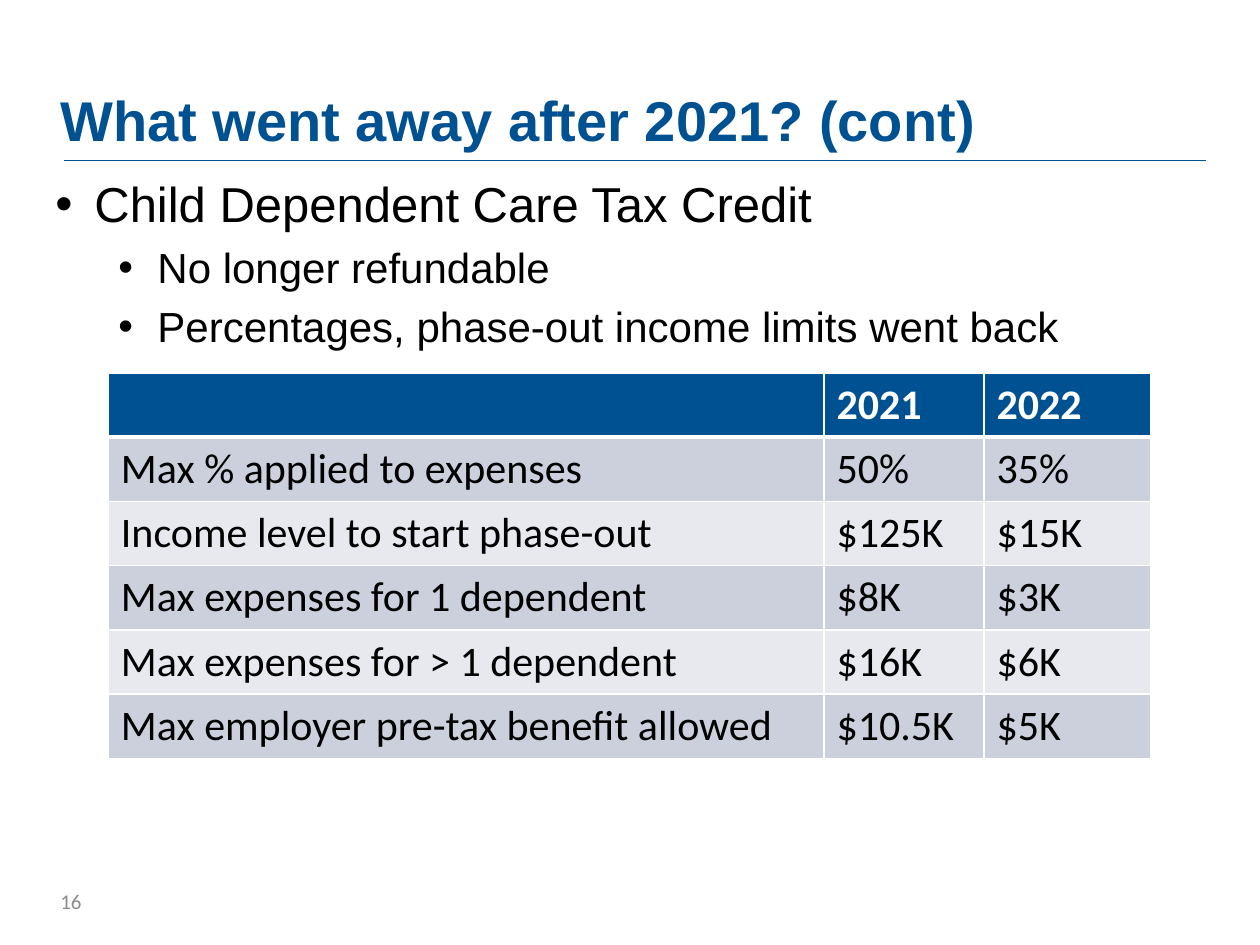
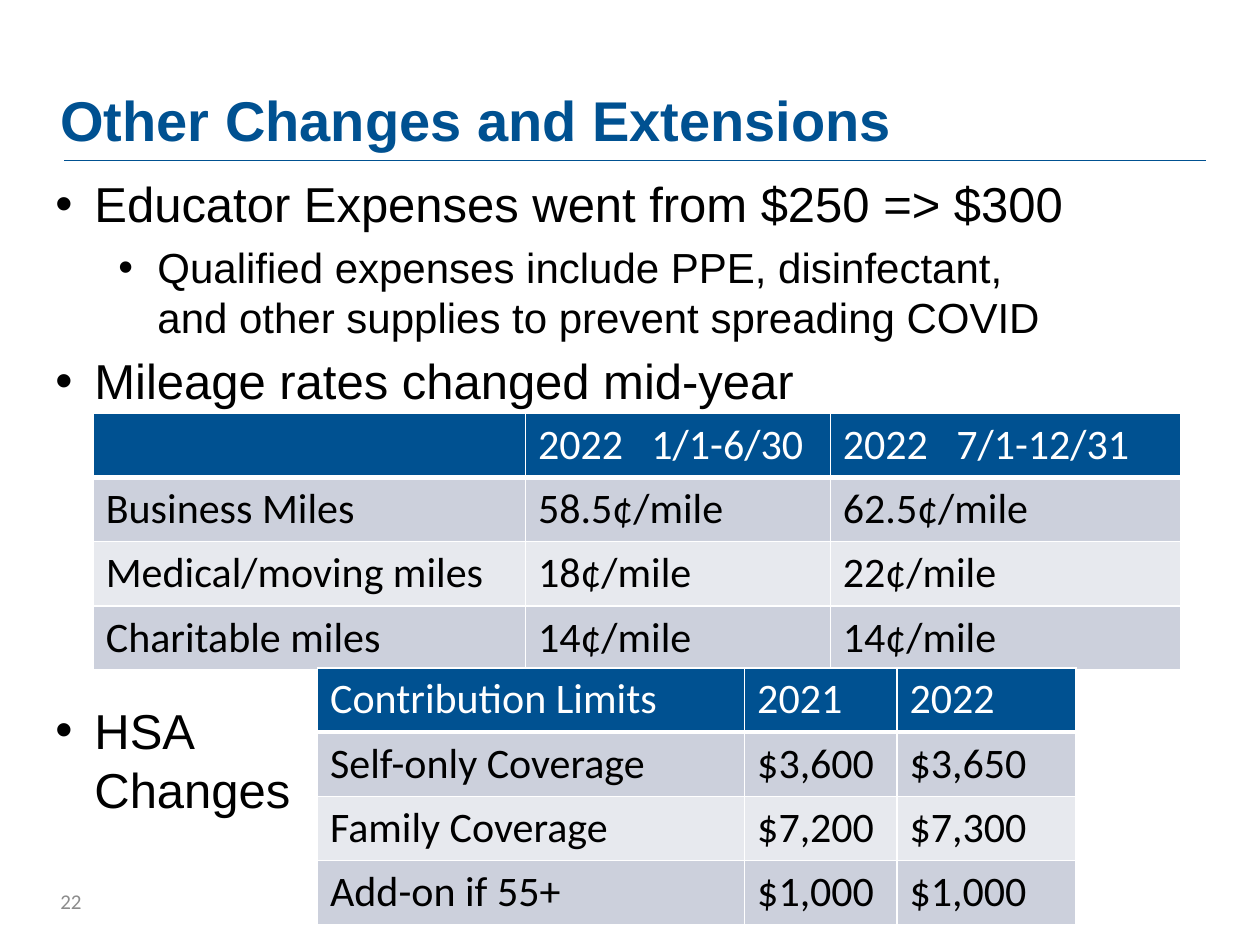
import lxml.etree
import pptx
import pptx.dml.color
import pptx.enum.shapes
import pptx.enum.text
import pptx.oxml.ns
import pptx.util

Inches = pptx.util.Inches
Pt = pptx.util.Pt
RGBColor = pptx.dml.color.RGBColor
Anchor = pptx.enum.text.MSO_ANCHOR

BLUE = RGBColor(0x00, 0x51, 0x91)
GRAY = RGBColor(0x8C, 0x8C, 0x8C)
BLACK = RGBColor(0x00, 0x00, 0x00)
WHITE = RGBColor(0xFF, 0xFF, 0xFF)
BANDS = [RGBColor(0xCC, 0xD0, 0xDC), RGBColor(0xE7, 0xE9, 0xEE)]
TEXT_FONT = "Arial"
TABLE_FONT = "Calibri"

ROW_HEIGHT = 0.51
DATE_TAB = 0.9
BULLET_HANG = 0.31
BULLET_LEVELS = [(0.48, 28), (0.98, 24)]  # indent in inches, size in points
BULLET_GAP = 5
GAP_BESIDE_TABLE = 166

# Bullets are (level, text, space before in points).
SLIDES = [
    {
        "title": "What went away after 2021? (cont)",
        "number": "16",
        "bullets": [
            (0, "Child Dependent Care Tax Credit", 0),
            (1, "No longer refundable", BULLET_GAP),
            (1, "Percentages, phase-out income limits went back", BULLET_GAP),
        ],
        "tables": [
            {
                "position": (0.86, 2.96),
                "columns": (5.68, 1.27, 1.32),
                "bold_header": True,
                "rows": [
                    ("", "2021", "2022"),
                    ("Max % applied to expenses", "50%", "35%"),
                    ("Income level to start phase-out", "$125K", "$15K"),
                    ("Max expenses for 1 dependent", "$8K", "$3K"),
                    ("Max expenses for > 1 dependent", "$16K", "$6K"),
                    ("Max employer pre-tax benefit allowed", "$10.5K", "$5K"),
                ],
            },
        ],
    },
    {
        "title": "Other Changes and Extensions",
        "number": "22",
        "bullets": [
            (0, "Educator Expenses went from $250 => $300", 0),
            (1, "Qualified expenses include PPE, disinfectant,\v"
                "and other supplies to prevent spreading COVID", BULLET_GAP),
            (0, "Mileage rates changed mid-year", BULLET_GAP),
            (0, "HSA\vChanges", GAP_BESIDE_TABLE),
        ],
        "tables": [
            {
                "position": (0.74, 3.28),
                "columns": (3.43, 2.42, 2.78),
                "bold_header": False,
                "rows": [
                    ("", "2022\t1/1-6/30", "2022\t7/1-12/31"),
                    ("Business Miles", "58.5¢/mile", "62.5¢/mile"),
                    ("Medical/moving miles", "18¢/mile", "22¢/mile"),
                    ("Charitable miles", "14¢/mile", "14¢/mile"),
                ],
            },
            {
                "position": (2.52, 5.3),
                "columns": (3.39, 1.21, 1.42),
                "bold_header": False,
                "rows": [
                    ("Contribution Limits", "2021", "2022"),
                    ("Self-only Coverage", "$3,600", "$3,650"),
                    ("Family Coverage", "$7,200", "$7,300"),
                    ("Add-on if 55+", "$1,000", "$1,000"),
                ],
            },
        ],
    },
]


def add_element(parent, tag, **attributes):
    return lxml.etree.SubElement(parent, pptx.oxml.ns.qn(tag), **attributes)


def format_runs(paragraph, font_name, size, color, bold=False):
    for run in paragraph.runs:
        run.font.name = font_name
        run.font.size = Pt(size)
        run.font.color.rgb = color
        run.font.bold = bold


def add_text_frame(slide, left, top, width, height, anchor):
    box = slide.shapes.add_textbox(Inches(left), Inches(top), Inches(width), Inches(height))
    text_frame = box.text_frame
    text_frame.word_wrap = True
    text_frame.vertical_anchor = anchor
    return text_frame


def add_frame(slide, title, number):
    """Add the title, the rule below it and the slide number."""
    rule = slide.shapes.add_connector(
        pptx.enum.shapes.MSO_CONNECTOR.STRAIGHT,
        Inches(0.51), Inches(1.27), Inches(9.57), Inches(1.27))
    rule.line.color.rgb = BLUE
    rule.line.width = Pt(0.5)
    add_element(rule.element.spPr, "a:effectLst")

    number_frame = add_text_frame(slide, 0.38, 6.95, 2.25, 0.4, Anchor.MIDDLE)
    number_frame.text = number
    format_runs(number_frame.paragraphs[0], TABLE_FONT, 12, GRAY)

    title_frame = add_text_frame(slide, 0.38, 0.69, 9.27, 0.58, Anchor.BOTTOM)
    title_frame.text = title
    title_frame.paragraphs[0].line_spacing = 0.9
    format_runs(title_frame.paragraphs[0], TEXT_FONT, 32, BLUE, bold=True)


def add_bullets(slide, bullets):
    text_frame = add_text_frame(slide, 0.27, 1.33, 9.5, 6.02, Anchor.TOP)
    text_frame.margin_left = text_frame.margin_right = 0
    for index, (level, text, space_before) in enumerate(bullets):
        paragraph = text_frame.add_paragraph() if index else text_frame.paragraphs[0]
        paragraph.text = text
        paragraph.level = level
        indent, size = BULLET_LEVELS[level]
        properties = paragraph._p.get_or_add_pPr()
        properties.set("marL", str(Inches(indent)))
        properties.set("indent", str(-Inches(BULLET_HANG)))
        add_element(properties, "a:buFont", typeface=TEXT_FONT)
        add_element(properties, "a:buChar", char="•")
        paragraph.space_before = Pt(space_before)
        format_runs(paragraph, TEXT_FONT, size, BLACK)


def set_borders(cell, bottom_width):
    properties = cell._tc.get_or_add_tcPr()
    for side, width in (("L", 1), ("R", 1), ("T", 1), ("B", bottom_width)):
        line = add_element(properties, f"a:ln{side}", w=str(Pt(width)))
        add_element(add_element(line, "a:solidFill"), "a:srgbClr", val=str(WHITE))


def add_table(slide, position, columns, bold_header, rows):
    left, top = position
    table = slide.shapes.add_table(
        len(rows), len(columns), Inches(left), Inches(top),
        Inches(sum(columns)), Inches(ROW_HEIGHT * len(rows))).table
    table.horz_banding = False
    for column, width in zip(table.columns, columns):
        column.width = Inches(width)
    for row_index, row in enumerate(rows):
        is_header = row_index == 0
        for column_index, text in enumerate(row):
            cell = table.cell(row_index, column_index)
            set_borders(cell, 3 if is_header else 1)
            cell.fill.solid()
            cell.fill.fore_color.rgb = BLUE if is_header else BANDS[(row_index - 1) % 2]
            paragraph = cell.text_frame.paragraphs[0]
            paragraph.text = text
            if "\t" in text:
                tabs = add_element(paragraph._p.get_or_add_pPr(), "a:tabLst")
                add_element(tabs, "a:tab", pos=str(Inches(DATE_TAB)), algn="l")
            format_runs(paragraph, TABLE_FONT, 24, WHITE if is_header else BLACK,
                        bold=is_header and bold_header)


def main():
    presentation = pptx.Presentation()
    presentation.slide_width = Inches(10)
    presentation.slide_height = Inches(7.5)
    for content in SLIDES:
        slide = presentation.slides.add_slide(presentation.slide_layouts[6])
        add_frame(slide, content["title"], content["number"])
        add_bullets(slide, content["bullets"])
        for table in content["tables"]:
            add_table(slide, **table)
    presentation.save("out.pptx")


if __name__ == "__main__":
    main()
